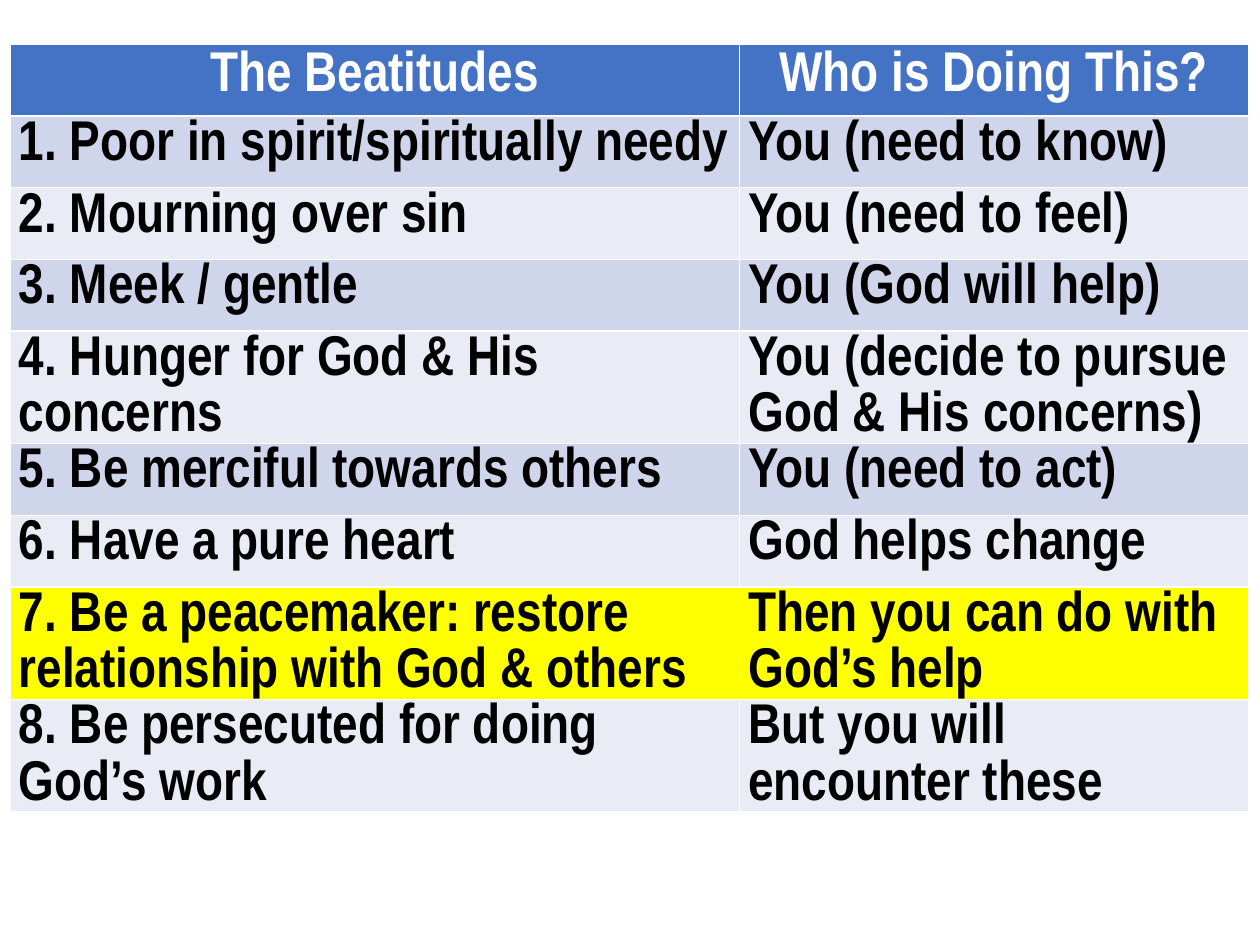
from pptx import Presentation
from pptx.dml.color import RGBColor
from pptx.enum.text import PP_ALIGN as Align
from pptx.util import Inches, Pt

COLUMN_WIDTHS = (5.79, 4.04)
ROW_HEIGHT = 0.57
HEADINGS = ("The Beatitudes", "Who is Doing This?")
BEATITUDES = (
    ("1. Poor in spirit/spiritually needy", "You (need to know)"),
    ("2. Mourning over sin", "You (need to feel)"),
    ("3. Meek / gentle", "You (God will help)"),
    ("4. Hunger for God & His concerns", "You (decide to pursue God & His concerns)"),
    ("5. Be merciful towards others", "You (need to act)"),
    ("6. Have a pure heart", "God helps change"),
    ("7. Be a peacemaker: restore relationship with God & others",
     "Then you can do with God’s help"),
    ("8. Be persecuted for doing God’s work", "But you will encounter these"),
)
HEADING_FILL = "4472C4"
BAND_FILLS = ("CFD5EA", "E9EBF5")
HIGHLIGHT_FILL = "FFFF00"
HIGHLIGHTED = 7


def rgb(value):
    """Return the colour for a hex string."""
    return RGBColor.from_string(value)


def write_cell(cell, wording, fill, color):
    """Fill a cell, write its wording and return the paragraph."""
    cell.fill.solid()
    cell.fill.fore_color.rgb = rgb(fill)
    cell.text = wording
    paragraph = cell.text_frame.paragraphs[0]
    font = paragraph.font
    font.name, font.size, font.bold = "Arial Narrow", Pt(32), True
    font.color.rgb = rgb(color)
    return paragraph


def write_heading(cell, wording):
    """Write a centred column heading."""
    write_cell(cell, wording, HEADING_FILL, "FFFFFF").alignment = Align.CENTER


def write_entry(cell, wording, fill):
    """Write a body entry with narrow margins."""
    write_cell(cell, wording, fill, "000000").line_spacing = 1.07
    cell.margin_left = cell.margin_right = Inches(0.07)
    cell.margin_top = cell.margin_bottom = 0


def add_beatitudes(slide):
    """Add the table of beatitudes and who does each."""
    row_count = len(BEATITUDES) + 1
    table = slide.shapes.add_table(
        row_count, len(COLUMN_WIDTHS), Inches(0.08), Inches(0.35),
        Inches(sum(COLUMN_WIDTHS)), Inches(ROW_HEIGHT * row_count)).table
    for column, width in zip(table.columns, COLUMN_WIDTHS):
        column.width = Inches(width)
    for row in table.rows:
        row.height = Inches(ROW_HEIGHT)
    for column, heading in enumerate(HEADINGS):
        write_heading(table.cell(0, column), heading)
    for number, entries in enumerate(BEATITUDES, 1):
        fill = HIGHLIGHT_FILL if number == HIGHLIGHTED else BAND_FILLS[(number - 1) % 2]
        for column, entry in enumerate(entries):
            write_entry(table.cell(number, column), entry, fill)


def main():
    """Build and save the slide."""
    deck = Presentation()
    deck.slide_width, deck.slide_height = Inches(10), Inches(7.5)
    add_beatitudes(deck.slides.add_slide(deck.slide_layouts[6]))
    deck.save("out.pptx")


if __name__ == "__main__":
    main()
